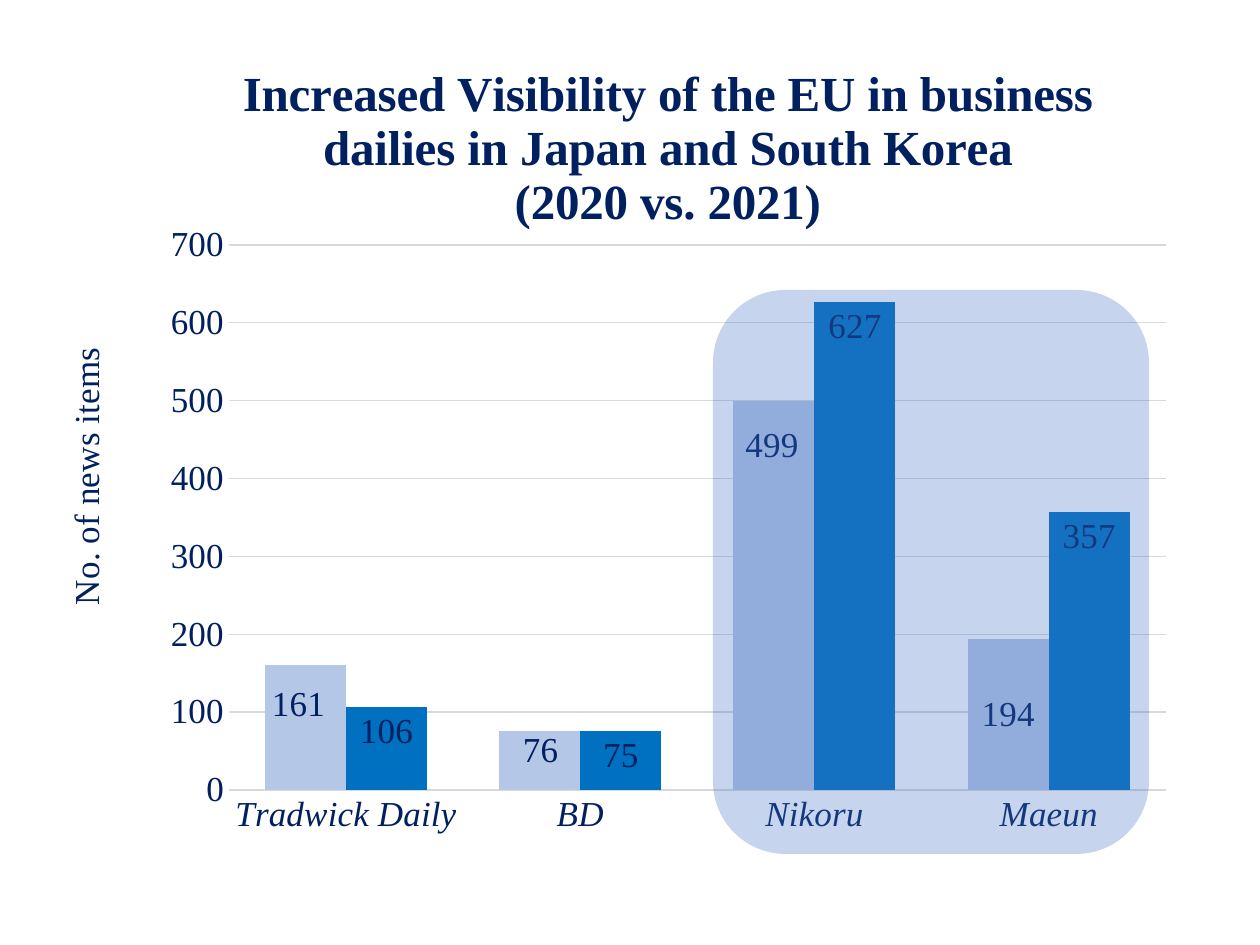
from dataclasses import dataclass

from lxml import etree
from pptx import Presentation
from pptx.chart.data import CategoryChartData
from pptx.dml.color import RGBColor
from pptx.enum.chart import XL_CHART_TYPE, XL_LABEL_POSITION, XL_TICK_MARK
from pptx.enum.shapes import MSO_SHAPE
from pptx.oxml.ns import qn
from pptx.util import Pt

EMU_PER_PX = 914400 / 126
COLUMNS = XL_CHART_TYPE.COLUMN_CLUSTERED
CENTER = XL_LABEL_POSITION.CENTER
INSIDE_END = XL_LABEL_POSITION.INSIDE_END
NO_TICK = XL_TICK_MARK.NONE
ROUNDED = MSO_SHAPE.ROUNDED_RECTANGLE
FONT = "Times New Roman"
NAVY, GRID = "002060", "D9D9D9"
CHART_WIDTH, CHART_HEIGHT = 1237, 862
CATEGORIES = ["Tradwick Daily", "BD", "Nikoru", "Maeun"]
TITLE = ("Increased Visibility of the EU in business dailies in Japan and South Korea\n"
         "(2020 vs. 2021)")


@dataclass
class NewsSeries:
    name: str
    values: list[int]
    color: str
    label_position: XL_LABEL_POSITION
    label_shifts: dict[int, tuple[int, int]]


SERIES = [
    NewsSeries("Series 1", [161, 76, 499, 194], "B4C7E7", CENTER,
               {0: (-7, -23), 1: (1, -10), 2: (-2, -150)}),
    NewsSeries("Series 2", [106, 75, 627, 357], "0070C0", INSIDE_END, {}),
]


def px(length: int) -> int:
    return round(length * EMU_PER_PX)


def rgb(color: str) -> RGBColor:
    return RGBColor.from_string(color)


def style_font(font, size: int = 20, bold: bool = False, italic: bool = False) -> None:
    font.name, font.size = FONT, Pt(size)
    font.bold, font.italic = bold, italic
    font.color.rgb = rgb(NAVY)


def style_line(line) -> None:
    line.color.rgb = rgb(GRID)
    line.width = Pt(0.75)


def set_layout(parent, index: int, modes: dict[str, str], **lengths: int) -> None:
    for layout in parent.findall(qn("c:layout")):
        parent.remove(layout)
    layout = etree.Element(qn("c:layout"))
    manual = etree.SubElement(layout, qn("c:manualLayout"))
    for tag, mode in modes.items():
        etree.SubElement(manual, qn(f"c:{tag}")).set("val", mode)
    for tag, length in lengths.items():
        whole = CHART_WIDTH if tag in "xw" else CHART_HEIGHT
        etree.SubElement(manual, qn(f"c:{tag}")).set("val", str(round(length / whole, 4)))
    parent.insert(index, layout)


def set_title(title, text: str, size: int, bold: bool, left: int, top: int) -> None:
    title.text_frame.text = text
    for para in title.text_frame.paragraphs:
        style_font(para.font, size, bold)
        for span in para.runs:
            style_font(span.font, size, bold)
    set_layout(title._element, 1, {"xMode": "edge", "yMode": "edge"}, x=left, y=top)


def style_series(series, news: NewsSeries) -> None:
    series.format.fill.solid()
    series.format.fill.fore_color.rgb = rgb(news.color)
    series.invert_if_negative = False
    labels = series.data_labels
    labels.show_value = True
    labels.position = news.label_position
    style_font(labels.font)
    for index, (right, down) in news.label_shifts.items():
        label = series.points[index].data_label
        style_font(label.font)
        label.position = news.label_position
        element = labels._element.find(qn("c:dLbl") + f"[{index + 1}]")
        set_layout(element, 1, {}, x=right, y=down)
    for leader in labels._element.findall(qn("c:showLeaderLines")):
        leader.set("val", "0")


def style_axes(chart) -> None:
    category, value = chart.category_axis, chart.value_axis
    for axis in (category, value):
        axis.major_tick_mark = axis.minor_tick_mark = NO_TICK
        style_font(axis.tick_labels.font, italic=axis is category)
    style_line(category.format.line)
    value.format.line.fill.background()
    value.minimum_scale, value.maximum_scale, value.major_unit = 0, 700, 100
    style_line(value.major_gridlines.format.line)
    set_title(value.axis_title, "No. of news items", 20, False, 57, 299)
    body = value.axis_title.text_frame._txBody.bodyPr
    body.set("rot", "-5400000")
    body.set("vert", "horz")


def add_news_chart(page) -> None:
    chart_data = CategoryChartData()
    chart_data.categories = CATEGORIES
    for news in SERIES:
        chart_data.add_series(news.name, news.values)
    chart = page.shapes.add_chart(COLUMNS, 0, px(42), px(CHART_WIDTH),
                                  px(CHART_HEIGHT), chart_data).chart
    style_font(chart.font)
    chart.has_legend = False
    set_title(chart.chart_title, TITLE, 28, True, 239, 20)
    plot = chart.plots[0]
    plot.gap_width, plot.overlap, plot.vary_by_categories = 89, 0, False
    for series, news in zip(plot.series, SERIES):
        style_series(series, news)
    style_axes(chart)
    plot_area = chart._chartSpace.find(".//" + qn("c:plotArea"))
    set_layout(plot_area, 0, {"layoutTarget": "inner", "xMode": "edge", "yMode": "edge"},
               x=229, y=203, w=937, h=545)


def add_highlight(page) -> None:
    highlight = page.shapes.add_shape(ROUNDED, px(713), px(290), px(436), px(564))
    highlight.shadow.inherit = False
    highlight.line.fill.background()
    highlight.fill.solid()
    highlight.fill.fore_color.rgb = rgb("4472C4")
    color = highlight._element.spPr.find(".//" + qn("a:srgbClr"))
    etree.SubElement(color, qn("a:alpha")).set("val", "30000")


def main() -> None:
    deck = Presentation()
    deck.slide_width, deck.slide_height = px(1260), px(945)
    page = deck.slides.add_slide(deck.slide_layouts[6])
    add_news_chart(page)
    add_highlight(page)
    deck.save("out.pptx")


if __name__ == "__main__":
    main()
